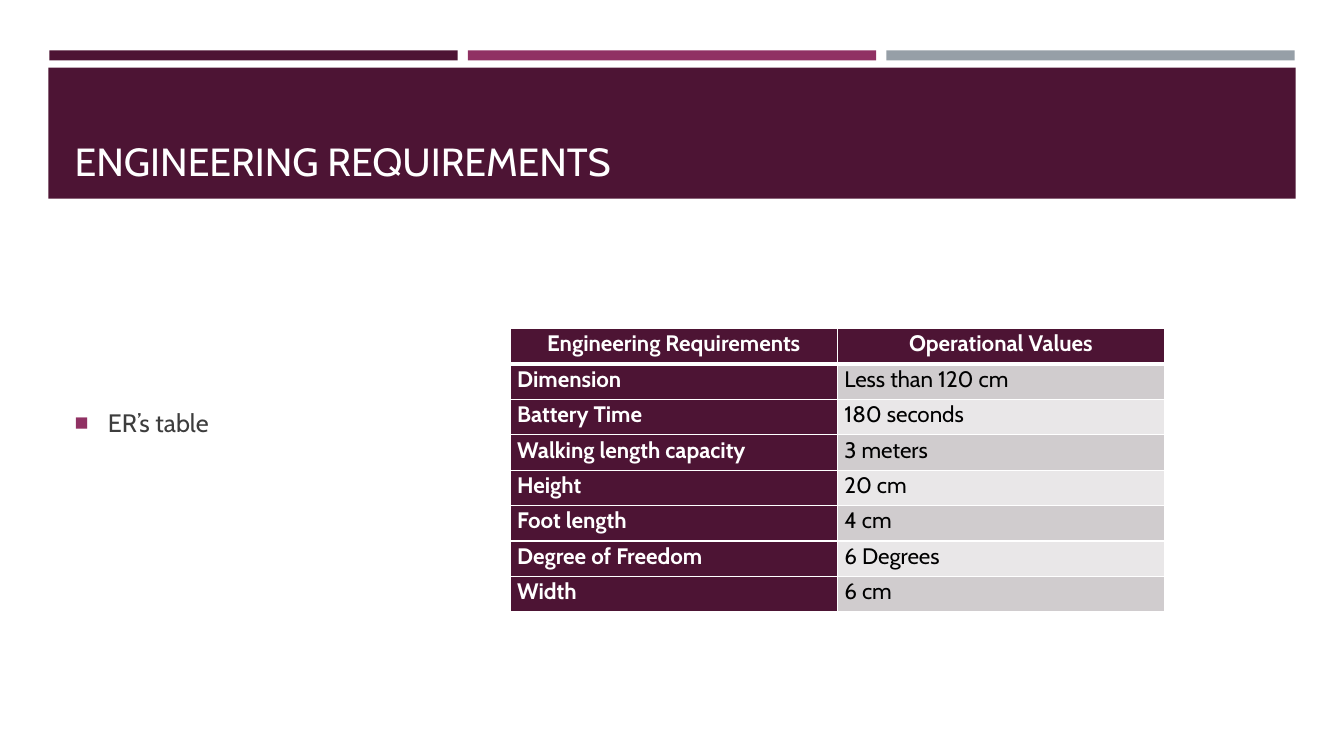
"""Build the engineering requirements slide."""
from dataclasses import dataclass

from lxml.etree import SubElement
from pptx import Presentation
from pptx.dml.color import RGBColor
from pptx.enum.shapes import MSO_SHAPE
from pptx.enum.text import MSO_ANCHOR, MSO_AUTO_SIZE, PP_ALIGN
from pptx.oxml.ns import qn
from pptx.util import Inches, Pt


@dataclass(frozen=True)
class Theme:
    font: str = "Cabin"
    plum: str = "4D1434"
    berry: str = "903163"
    steel: str = "969FA7"
    white: str = "FFFFFF"
    black: str = "000000"
    ink: str = "3D3D3D"
    bands: tuple = ("D0CCCE", "E9E7E8")
    title: int = 28
    body: int = 18
    cell: int = 16


THEME = Theme()
ROWS = [
    ("Engineering Requirements", "Operational Values"),
    ("Dimension", "Less than 120 cm"),
    ("Battery Time", "180 seconds"),
    ("Walking length capacity", "3 meters"),
    ("Height", "20 cm"),
    ("Foot length", "4 cm"),
    ("Degree of Freedom", "6 Degrees"),
    ("Width", "6 cm"),
]


def paint(fill, color):
    fill.solid()
    fill.fore_color.rgb = RGBColor.from_string(color)


def add_run(para, text, size, color, bold=False):
    run = para.add_run()
    run.text = text
    font = run.font
    font.name, font.size, font.bold = THEME.font, Pt(size), bold
    font.color.rgb = RGBColor.from_string(color)


def add_bar(slide, left, top, width, height, color):
    bar = slide.shapes.add_shape(
        MSO_SHAPE.RECTANGLE, Inches(left), Inches(top), Inches(width), Inches(height)
    )
    bar.shadow.inherit = False
    paint(bar.fill, color)
    bar.line.fill.background()


def place(holder, left, top, width, height, anchor):
    holder.left, holder.top = Inches(left), Inches(top)
    holder.width, holder.height = Inches(width), Inches(height)
    frame = holder.text_frame
    frame.word_wrap = True
    frame.auto_size = MSO_AUTO_SIZE.NONE
    frame.vertical_anchor = anchor
    para = frame.paragraphs[0]
    para.alignment = PP_ALIGN.LEFT
    return frame, para


def add_bullet(para, color):
    props = para._p.get_or_add_pPr()
    props.set("marL", str(Inches(0.33)))
    props.set("indent", str(-Inches(0.33)))
    tint = SubElement(props, qn("a:buClr"))
    SubElement(tint, qn("a:srgbClr"), val=color)
    SubElement(props, qn("a:buSzPct"), val="92000")
    SubElement(props, qn("a:buFont"), typeface="Arial")
    SubElement(props, qn("a:buChar"), char="■")


def add_edge(cell, side, width):
    props = cell._tc.get_or_add_tcPr()
    line = SubElement(props, qn(f"a:ln{side}"), w=str(Pt(width)))
    fill = SubElement(line, qn("a:solidFill"))
    SubElement(fill, qn("a:srgbClr"), val=THEME.white)


def fill_cell(cell, text, row, col):
    head = row == 0
    dark = head or col == 0
    cell.margin_left = cell.margin_right = Inches(0.07)
    cell.margin_top = cell.margin_bottom = 0
    for side in "LRTB":
        thick = (head and side == "B") or (row == 1 and side == "T")
        add_edge(cell, side, 3 if thick else 1)
    paint(cell.fill, THEME.plum if dark else THEME.bands[(row - 1) % 2])
    para = cell.text_frame.paragraphs[0]
    para.alignment = PP_ALIGN.CENTER if head else PP_ALIGN.LEFT
    para.line_spacing = 1.07
    add_run(para, text, THEME.cell, THEME.white if dark else THEME.black, dark)


def add_grid(slide, rows, left, top, width, height):
    table = slide.shapes.add_table(
        len(rows), len(rows[0]), Inches(left), Inches(top), Inches(width), Inches(height)
    ).table
    table.first_col = True
    for row, texts in enumerate(rows):
        for col, text in enumerate(texts):
            fill_cell(table.cell(row, col), text, row, col)


def main():
    deck = Presentation()
    deck.slide_width, deck.slide_height = Inches(13.33), Inches(7.5)
    slide = deck.slides.add_slide(deck.slide_layouts[1])
    title, body = slide.placeholders

    for i, color in enumerate((THEME.plum, THEME.berry, THEME.steel)):
        add_bar(slide, 0.49 + i * 4.15, 0.5, 4.05, 0.1, color)
    add_bar(slide, 0.48, 0.67, 12.37, 1.3, THEME.plum)

    for holder in (title, body):
        slide.shapes.element.append(holder.element)
    _, para = place(title, 0.64, 0.77, 12.06, 1.11, MSO_ANCHOR.BOTTOM)
    add_run(para, "ENGINEERING REQUIREMENTS", THEME.title, THEME.white)

    frame, para = place(body, 0.64, 2.38, 12.06, 4.02, MSO_ANCHOR.MIDDLE)
    frame.margin_bottom = Inches(0.45)
    para.space_after = Pt(6)
    add_bullet(para, THEME.berry)
    add_run(para, "ER’s table", THEME.body, THEME.ink)

    add_grid(slide, ROWS, 5.06, 3.26, 6.49, 2.81)
    deck.save("out.pptx")


if __name__ == "__main__":
    main()
